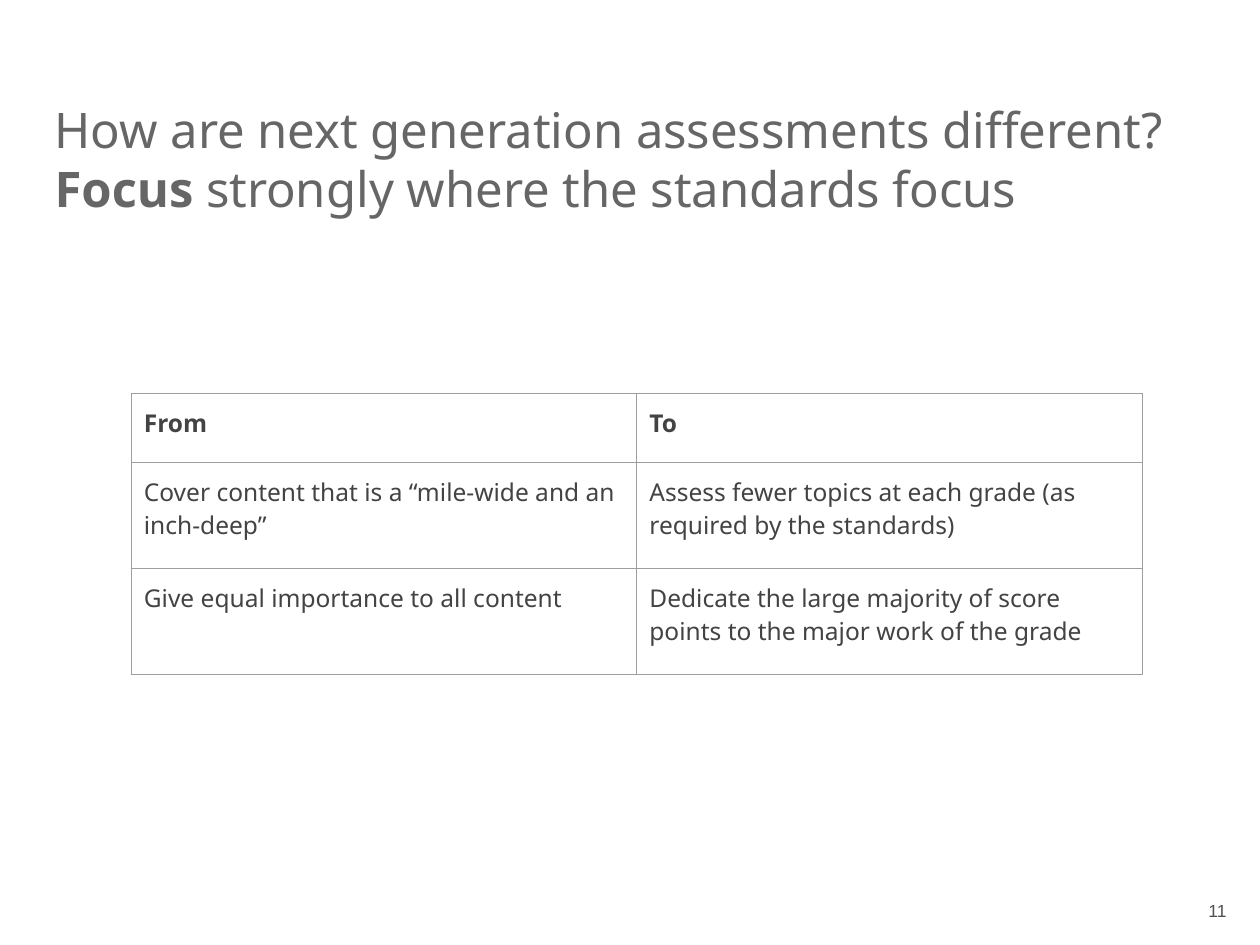
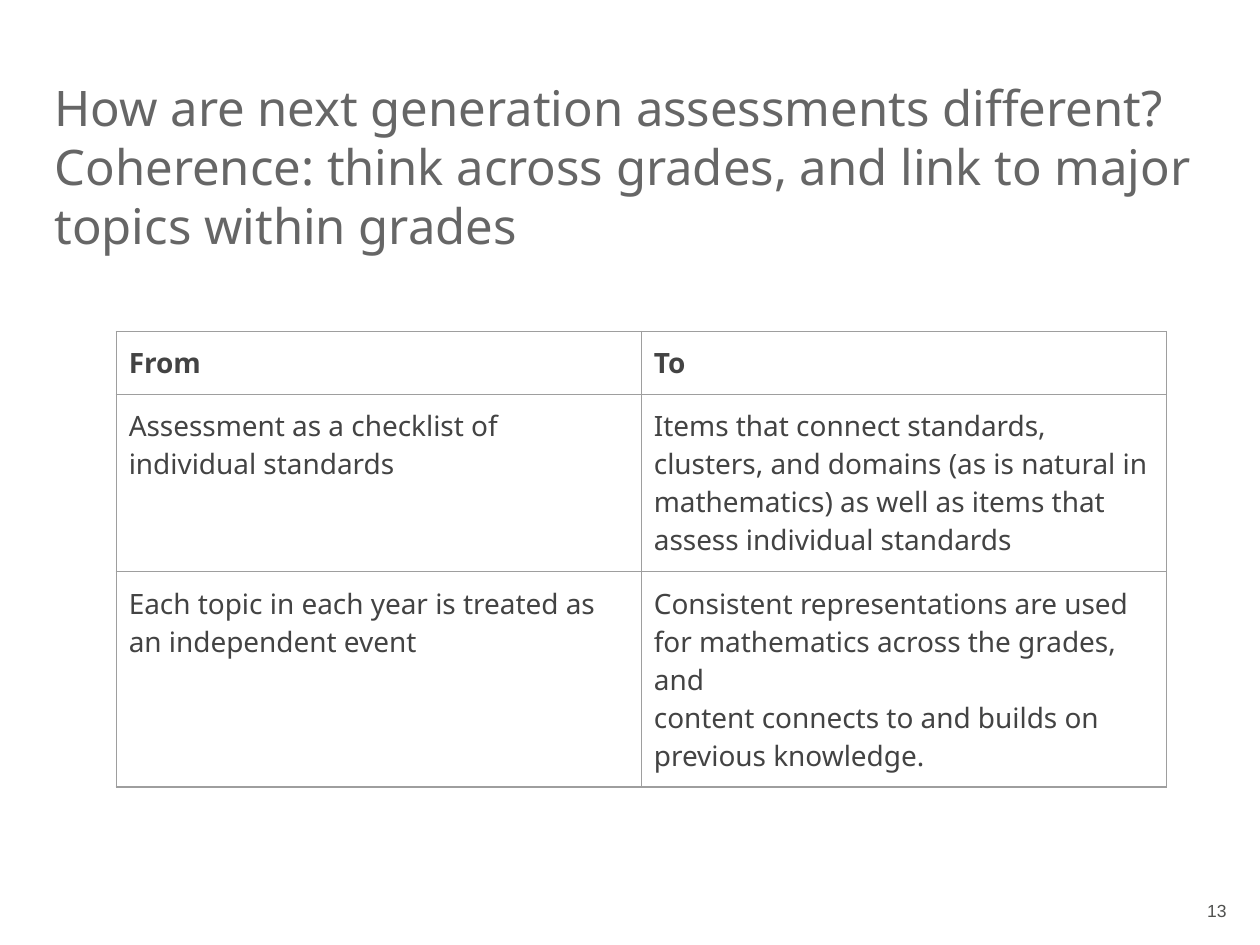
from lxml.etree import SubElement
from pptx import Presentation
from pptx.dml.color import RGBColor
from pptx.enum.text import MSO_ANCHOR as Anchor, MSO_AUTO_SIZE as AutoSize, PP_ALIGN as Align
from pptx.oxml.ns import qn
from pptx.util import Pt

COLORS = {"title": "666666", "cell": "434343", "number": "50514F", "border": "9E9E9E"}
BODY_FONT = "Noto Sans"
NUMBER_FONT = "Arial"
INSET = 7.2
NUMBER_BOX = (596.2, 510.5, 114.5, 19.4)
QUESTION = "How are next generation assessments different?"


def write_text(frame, paragraphs, size, color, font=BODY_FONT, bold=False,
               align=Align.LEFT):
    """Each paragraph is a string, or a list of (text, bold) runs."""
    for index, content in enumerate(paragraphs):
        paragraph = frame.paragraphs[0] if index == 0 else frame.add_paragraph()
        paragraph.alignment = align
        paragraph.space_before = Pt(0)
        paragraph.line_spacing = 1.0
        runs = [(content, bold)] if isinstance(content, str) else content
        for text, is_bold in runs:
            run = paragraph.add_run()
            run.text = text
            run.font.name = font
            run.font.size = Pt(size)
            run.font.bold = is_bold
            run.font.color.rgb = RGBColor.from_string(COLORS[color])


def set_insets(target, horizontal=INSET, vertical=INSET):
    target.margin_left = target.margin_right = Pt(horizontal)
    target.margin_top = target.margin_bottom = Pt(vertical)


def place_title(slide, box, paragraphs):
    title = slide.shapes.title
    title.left, title.top, title.width, title.height = map(Pt, box)
    frame = title.text_frame
    frame.word_wrap = True
    frame.auto_size = AutoSize.NONE
    frame.vertical_anchor = Anchor.MIDDLE
    set_insets(frame)
    write_text(frame, paragraphs, 28, "title")


def add_page_number(slide, box, number):
    frame = slide.shapes.add_textbox(*map(Pt, box)).text_frame
    frame.word_wrap = True
    set_insets(frame, vertical=3.6)
    write_text(frame, [f"{number} "], 10, "number", font=NUMBER_FONT, align=Align.RIGHT)


def add_borders(cell, width=0.75):
    properties = cell._tc.get_or_add_tcPr()
    for side in ("lnL", "lnR", "lnT", "lnB"):
        line = SubElement(properties, qn(f"a:{side}"), w=str(Pt(width)))
        fill = SubElement(line, qn("a:solidFill"))
        SubElement(fill, qn("a:srgbClr"), val=COLORS["border"])


def add_comparison_table(slide, box, row_heights, rows, size):
    left, top, width = box
    rows = [(["From"], ["To"])] + rows
    columns = len(rows[0])
    table = slide.shapes.add_table(len(rows), columns, Pt(left), Pt(top),
                                   Pt(width), Pt(sum(row_heights))).table
    table.first_row = table.horz_banding = False
    for column in table.columns:
        column.width = Pt(width / columns)
    for row_index, (height, row) in enumerate(zip(row_heights, rows)):
        table.rows[row_index].height = Pt(height)
        for column_index, paragraphs in enumerate(row):
            cell = table.cell(row_index, column_index)
            set_insets(cell)
            cell.vertical_anchor = Anchor.TOP
            add_borders(cell)
            cell.fill.background()
            write_text(cell.text_frame, paragraphs, size, "cell", bold=row_index == 0)


def add_comparison_slide(presentation, number, title_box, subtitle, table_box,
                         row_heights, rows, size):
    slide = presentation.slides.add_slide(presentation.slide_layouts[5])
    add_page_number(slide, NUMBER_BOX, number)
    place_title(slide, title_box, [QUESTION, subtitle])
    add_comparison_table(slide, table_box, row_heights, rows, size)


def main():
    presentation = Presentation()
    presentation.slide_width, presentation.slide_height = Pt(720), Pt(540)

    # Focus
    add_comparison_slide(
        presentation, 11,
        title_box=(24, 45.4, 675.4, 90),
        subtitle=[("Focus", True), (" strongly where the standards focus", False)],
        table_box=(75, 225, 577.8),
        row_heights=(39.4, 60.5, 60.5),
        rows=[
            (["Cover content that is a “mile-wide and an inch-deep”"],
             ["Assess fewer topics at each grade (as required by the standards)"]),
            (["Give equal importance to all content"],
             ["Dedicate the large majority of score points to the major work of the grade"]),
        ],
        size=14)

    # Coherence
    add_comparison_slide(
        presentation, 13,
        title_box=(24, 39.6, 675.4, 110.2),
        subtitle="Coherence: think across grades, and link to major topics within grades",
        table_box=(66.4, 189.4, 600.2),
        row_heights=(36, 101.3, 123),
        rows=[
            (["Assessment as a checklist of individual standards"],
             ["Items that connect standards, clusters, and domains (as is natural in "
              "mathematics) as well as items that assess individual standards"]),
            (["Each topic in each year is treated as an independent event"],
             ["Consistent representations are used for mathematics across the grades, and",
              "content connects to and builds on previous knowledge."]),
        ],
        size=16)

    presentation.save("out.pptx")


if __name__ == "__main__":
    main()
